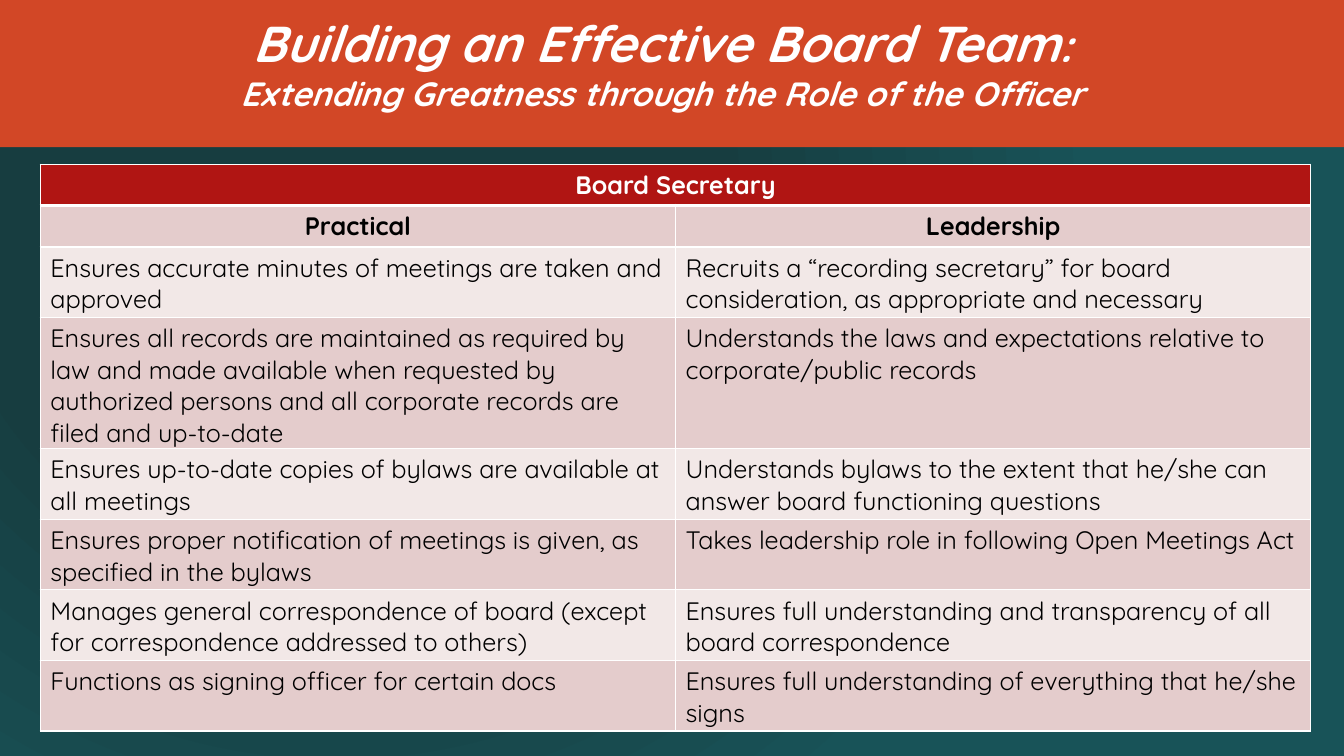
from lxml import etree
from pptx import Presentation
from pptx import util as u
from pptx.dml.color import RGBColor
from pptx.enum import shapes, text
from pptx.oxml import parse_xml
from pptx.oxml.ns import nsdecls, qn

COLORS = {
    "white": "FFFFFF", "black": "000000", "banner": "D24726", "header": "B01513",
    "band_dark": "E4CCCC", "band_light": "F2E8E7",
    "teal_dark": "173D40", "teal_light": "185358",
}
DUTIES = [
    ("Ensures accurate minutes of meetings are taken and approved",
     "Recruits a “recording secretary” for board consideration, as appropriate and necessary"),
    ("Ensures all records are maintained as required by law and made available when requested by "
     "authorized persons and all corporate records are filed and up-to-date",
     "Understands the laws and expectations relative to corporate/public records"),
    ("Ensures up-to-date copies of bylaws are available at all meetings",
     "Understands bylaws to the extent that he/she can answer board functioning questions"),
    ("Ensures proper notification of meetings is given, as specified in the bylaws",
     "Takes leadership role in following Open Meetings Act"),
    ("Manages general correspondence of board (except for correspondence addressed to others)",
     "Ensures full understanding and transparency of all board correspondence"),
    ("Functions as signing officer for certain docs",
     "Ensures full understanding of everything that he/she signs"),
]
ROWS = [("Board Secretary", ""), ("Practical", "Leadership")] + DUTIES
ROW_HEIGHTS = [0.41, 0.41, 0.7, 1.29, 0.7, 0.7, 0.7, 0.7]


def add_text(paragraph, words, size=18, color="black", bold=False, italic=False, font="Quicksand"):
    """Append a formatted run to a paragraph."""
    run = paragraph.add_run()
    run.text = words
    run.font.name = font
    run.font.size = u.Pt(size)
    run.font.bold = bold
    run.font.italic = italic
    run.font.color.rgb = RGBColor.from_string(COLORS[color])


class SlideBuilder:
    """Draws styled elements on the current slide."""

    def __init__(self, presentation):
        self.slide = presentation.slides.add_slide(presentation.slide_layouts[6])

    def background(self, inner, outer):
        """Fill the background with a circular gradient."""
        background = parse_xml(
            f'<p:bg {nsdecls("p", "a")}><p:bgPr><a:gradFill rotWithShape="1"><a:gsLst>'
            f'<a:gs pos="48000"><a:srgbClr val="{COLORS[inner]}"/></a:gs>'
            f'<a:gs pos="100000"><a:srgbClr val="{COLORS[outer]}"/></a:gs></a:gsLst>'
            '<a:path path="circle"><a:fillToRect l="50000" t="50000" r="100000" b="100000"/></a:path>'
            '</a:gradFill><a:effectLst/></p:bgPr></p:bg>')
        self.slide.element.cSld.insert(0, background)

    def rectangle(self, left, top, width, height, color):
        """Add a plain filled rectangle."""
        shape = self.slide.shapes.add_shape(
            shapes.MSO_SHAPE.RECTANGLE, *map(u.Inches, (left, top, width, height)))
        shape.shadow.inherit = False
        shape.fill.solid()
        shape.fill.fore_color.rgb = RGBColor.from_string(COLORS[color])
        shape.line.fill.background()

    def title(self, left, top, width, height, lines):
        """Add a centred title whose lines are lists of words and size."""
        box = self.slide.shapes.add_textbox(*map(u.Inches, (left, top, width, height)))
        box.text_frame.word_wrap = True
        paragraph = box.text_frame.paragraphs[0]
        paragraph.alignment = text.PP_ALIGN.CENTER
        for index, line in enumerate(lines):
            if index:
                paragraph.add_line_break()
            for words, size in line:
                add_text(paragraph, words, size=size, color="white", bold=True, italic=True)

    def borders(self, cell, top, bottom):
        """Draw white borders around a cell."""
        properties = cell._tc.get_or_add_tcPr()
        for side, width in (("L", 1), ("R", 1), ("T", top), ("B", bottom)):
            line = etree.SubElement(properties, qn(f"a:ln{side}"), w=str(u.Pt(width)))
            fill = etree.SubElement(line, qn("a:solidFill"))
            etree.SubElement(fill, qn("a:srgbClr"), val=COLORS["white"])

    def table(self, left, top, width, rows, heights):
        """Add a banded table with a merged first row."""
        frame = self.slide.shapes.add_table(
            len(rows), 2, *map(u.Inches, (left, top, width, sum(heights))))
        table = frame.table
        table.cell(0, 0).merge(table.cell(0, 1))
        for row, (entries, height) in enumerate(zip(rows, heights)):
            table.rows[row].height = u.Inches(height)
            band = "header" if row == 0 else ("band_light", "band_dark")[row % 2]
            for column, words in enumerate(entries):
                cell = table.cell(row, column)
                self.borders(cell, top=3 if row == 1 else 1, bottom=3 if row == 0 else 1)
                cell.fill.solid()
                cell.fill.fore_color.rgb = RGBColor.from_string(COLORS[band])
                if words:
                    paragraph = cell.text_frame.paragraphs[0]
                    paragraph.alignment = text.PP_ALIGN.CENTER if row < 2 else text.PP_ALIGN.LEFT
                    add_text(paragraph, words, color="white" if row == 0 else "black", bold=row < 2)


def main():
    """Build the board secretary slide."""
    presentation = Presentation()
    presentation.slide_width = u.Inches(13.33)
    presentation.slide_height = u.Inches(7.5)
    builder = SlideBuilder(presentation)
    builder.background("teal_dark", "teal_light")
    builder.rectangle(0, 0, 13.33, 1.46, "banner")
    builder.title(1.72, 0.07, 9.69, 1.92, [
        [("Building an Effective Board Team", 36), (":", 32)],
        [("Extending Greatness through the Role of the Officer", 24)],
    ])
    builder.table(0.4, 1.63, 12.6, ROWS, ROW_HEIGHTS)
    presentation.save("out.pptx")


if __name__ == "__main__":
    main()
